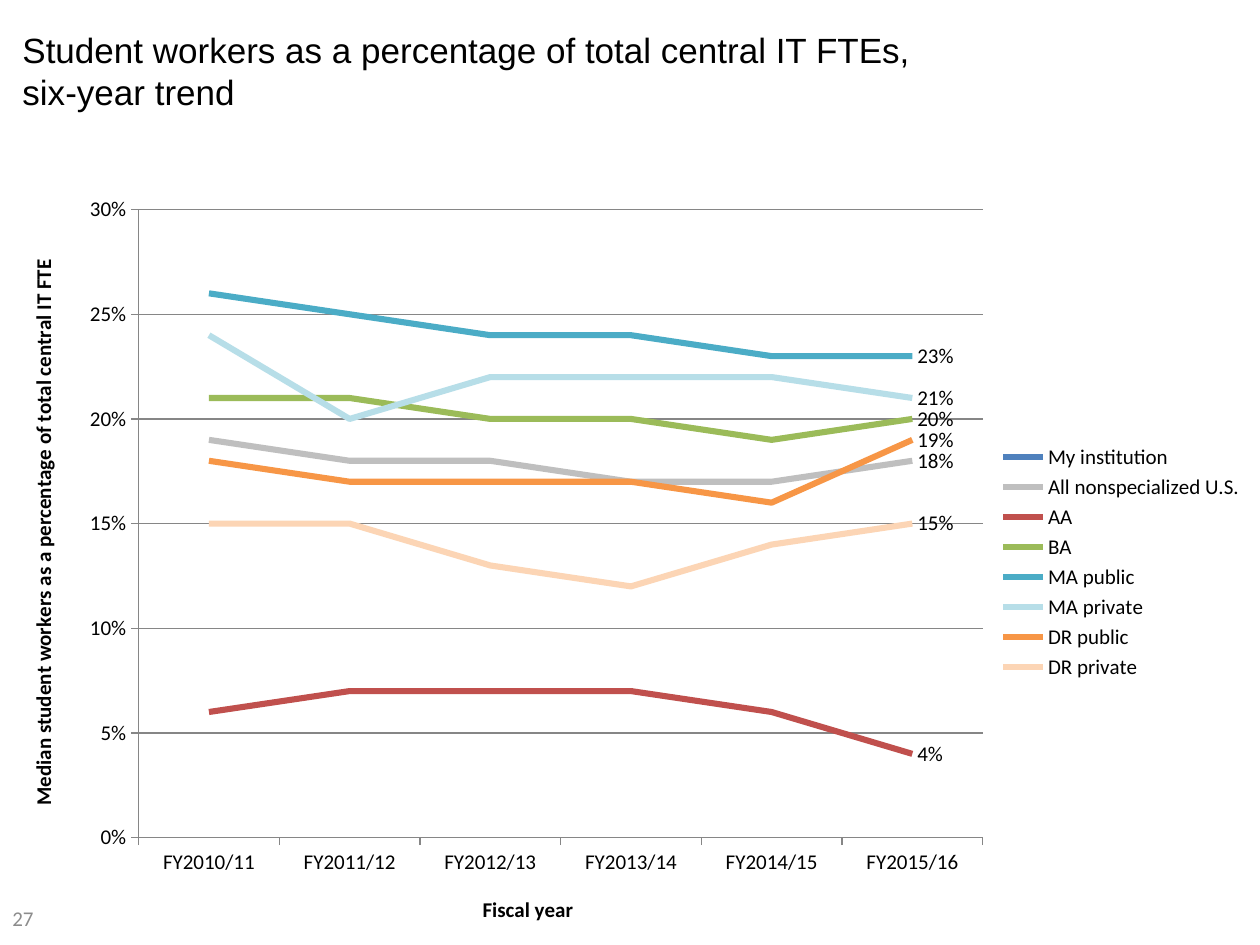
from lxml.etree import SubElement
from pptx import Presentation
from pptx.chart.data import CategoryChartData
from pptx.dml.color import RGBColor
from pptx.enum.chart import (XL_CHART_TYPE, XL_LABEL_POSITION,
                             XL_LEGEND_POSITION, XL_MARKER_STYLE, XL_TICK_MARK)
from pptx.enum.text import MSO_ANCHOR
from pptx.oxml.ns import qn
from pptx.util import Emu, Pt

SCALE = 914400 / 126
BLACK = RGBColor(0, 0, 0)
GRAY = RGBColor(0x8C, 0x8C, 0x8C)
RULE = RGBColor(0x86, 0x86, 0x86)
BLUE = RGBColor(0x4F, 0x81, 0xBD)
SILVER = RGBColor(0xBF, 0xBF, 0xBF)
RED = RGBColor(0xC0, 0x50, 0x4D)
GREEN = RGBColor(0x9B, 0xBB, 0x59)
TEAL = RGBColor(0x4B, 0xAC, 0xC6)
PALE = RGBColor(0xB7, 0xDE, 0xE8)
ORANGE = RGBColor(0xF7, 0x96, 0x46)
PEACH = RGBColor(0xFC, 0xD5, 0xB5)

YEARS = [f"FY{year}/{year - 1999}" for year in range(2010, 2016)]
SERIES = [
    ("My institution", BLUE, [None] * len(YEARS)),
    ("All nonspecialized U.S.", SILVER, [0.19, 0.18, 0.18, 0.17, 0.17, 0.18]),
    ("AA", RED, [0.06, 0.07, 0.07, 0.07, 0.06, 0.04]),
    ("BA", GREEN, [0.21, 0.21, 0.2, 0.2, 0.19, 0.2]),
    ("MA public", TEAL, [0.26, 0.25, 0.24, 0.24, 0.23, 0.23]),
    ("MA private", PALE, [0.24, 0.2, 0.22, 0.22, 0.22, 0.21]),
    ("DR public", ORANGE, [0.18, 0.17, 0.17, 0.17, 0.16, 0.19]),
    ("DR private", PEACH, [0.15, 0.15, 0.13, 0.12, 0.14, 0.15]),
]


def px(n):
    return Emu(round(n * SCALE))


def style(font, size, color=BLACK, name="Calibri", bold=False):
    font.size, font.name, font.bold = Pt(size), name, bold
    font.color.rgb = color


def add_text(slide, box, text, anchor, size, color, name):
    frame = slide.shapes.add_textbox(*map(px, box)).text_frame
    frame.word_wrap = True
    frame.vertical_anchor = anchor
    frame.text = text
    for run in frame.paragraphs[0].runs:
        style(run.font, size, color, name)


def place(node, at, **spots):
    """Give a chart part a manual layout, as fractions of the chart."""
    old = node.find(qn("c:layout"))
    if old is not None:
        node.remove(old)
    layout = SubElement(node, qn("c:layout"))
    node.insert(at, layout)
    manual = SubElement(layout, qn("c:manualLayout"))
    if node.tag == qn("c:plotArea"):
        SubElement(manual, qn("c:layoutTarget"), val="inner")
    for key in ("x", "y"):
        SubElement(manual, qn(f"c:{key}Mode"), val="edge")
    for key, val in spots.items():
        SubElement(manual, qn(f"c:{key}"), val=str(val))


def set_axis(axis, title):
    axis.major_tick_mark = XL_TICK_MARK.OUTSIDE
    axis.minor_tick_mark = XL_TICK_MARK.NONE
    axis.format.line.color.rgb = RULE
    axis.format.line.width = Pt(0.75)
    style(axis.tick_labels.font, 12)
    frame = axis.axis_title.text_frame
    frame.text = title
    style(frame.paragraphs[0].runs[0].font, 12, bold=True)


def set_series(series, color):
    series.smooth = False
    series.marker.style = XL_MARKER_STYLE.NONE
    series.format.line.color.rgb = color
    series.format.line.width = Pt(3.5)
    if series.values[-1] is not None:
        label = series.points[len(YEARS) - 1].data_label
        style(label.font, 12)
        label.position = XL_LABEL_POSITION.RIGHT


def add_trend(slide, box):
    data = CategoryChartData(number_format="0%")
    data.categories = YEARS
    for name, _, vals in SERIES:
        data.add_series(name, vals)
    chart = slide.shapes.add_chart(
        XL_CHART_TYPE.LINE, *map(px, box), data).chart
    chart.has_title = False
    style(chart.font, 12)
    chart.plots[0].vary_by_categories = False
    for series, (_, color, _) in zip(chart.plots[0].series, SERIES):
        set_series(series, color)

    set_axis(chart.category_axis, "Fiscal year")
    value = chart.value_axis
    set_axis(value, "Median student workers as a percentage of total central IT FTE")
    value.minimum_scale, value.maximum_scale, value.major_unit = 0, 0.3, 0.05
    value.tick_labels.number_format = "0%"
    value.tick_labels.number_format_is_linked = False
    value.has_major_gridlines = True
    value.major_gridlines.format.line.color.rgb = RULE
    value.major_gridlines.format.line.width = Pt(0.75)

    chart.has_legend = True
    chart.legend.position = XL_LEGEND_POSITION.RIGHT
    chart.legend.include_in_layout = False
    style(chart.legend.font, 12)

    root = chart.element
    place(root.find(".//" + qn("c:plotArea")), 0, x=0.11, y=0.04, w=0.67, h=0.82)
    place(root.find(".//" + qn("c:legend")), 1, x=0.79, y=0.34, w=0.2, h=0.32)
    place(root.find(f".//{qn('c:catAx')}/{qn('c:title')}"), 1, x=0.38, y=0.93)
    side = root.find(f".//{qn('c:valAx')}/{qn('c:title')}")
    place(side, 1, x=0.02, y=0.1)
    turn = side.find(".//" + qn("a:bodyPr"))
    turn.set("rot", "-5400000")
    turn.set("vert", "horz")


def main():
    deck = Presentation()
    deck.slide_width, deck.slide_height = px(1260), px(945)
    slide = deck.slides.add_slide(deck.slide_layouts[6])
    add_text(slide, (10, 22, 1178, 126),
             "Student workers as a percentage of total central IT FTEs,\vsix-year trend",
             MSO_ANCHOR.TOP, 20, BLACK, "Arial")
    add_trend(slide, (0, 179, 1260, 766))
    add_text(slide, (0, 892, 136, 53), "27", MSO_ANCHOR.MIDDLE, 12, GRAY, "Calibri")
    deck.save("out.pptx")


if __name__ == "__main__":
    main()
